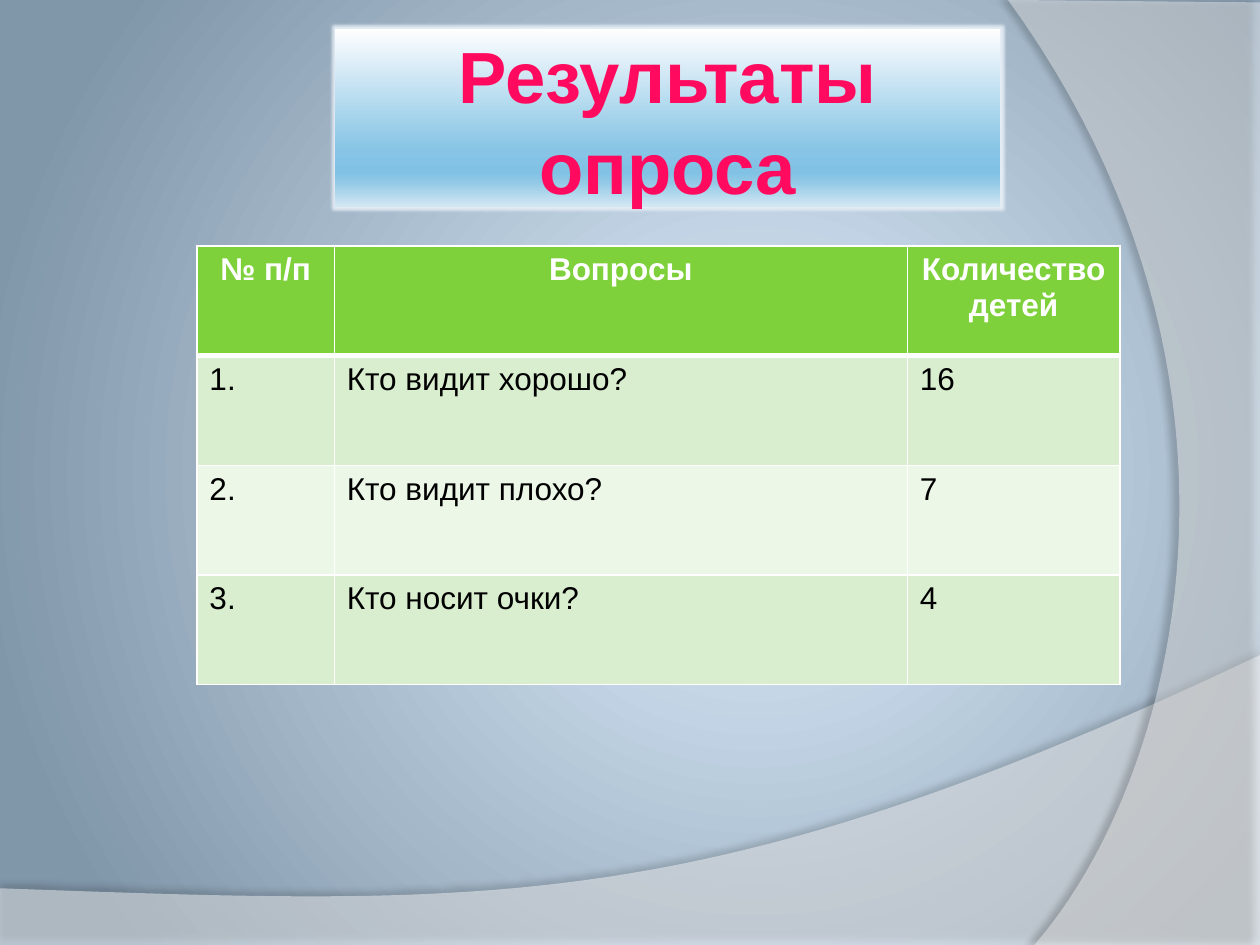
"""Build the survey results slide with its curved backdrop and table."""
from lxml import etree
from pptx import Presentation
from pptx.dml.color import RGBColor
from pptx.enum.text import MSO_ANCHOR, PP_ALIGN
from pptx.oxml import parse_xml
from pptx.oxml.ns import nsdecls, qn
from pptx.util import Pt

CENTER, LEFT = PP_ALIGN.CENTER, PP_ALIGN.LEFT
MIDDLE = MSO_ANCHOR.MIDDLE
WHITE = RGBColor(0xFF, 0xFF, 0xFF)
BLACK = RGBColor(0, 0, 0)
PINK = RGBColor(0xFF, 0x0A, 0x5E)
GREEN = RGBColor(0x7F, 0xD1, 0x3B)
LIGHT_GREEN = RGBColor(0xD8, 0xEE, 0xCE)
PALE_GREEN = RGBColor(0xEC, 0xF7, 0xE8)
HALO = RGBColor(0xE4, 0xEC, 0xF4)
BACKDROP = [(0, RGBColor(0xE0, 0xF0, 0xFF)), (100, RGBColor(0x80, 0x96, 0xA9))]
TITLE_STOPS = [
    (0, RGBColor(0xFE, 0xFE, 0xFF)),
    (68, RGBColor(0x87, 0xC4, 0xE5)),
    (81, RGBColor(0x81, 0xC2, 0xE4)),
    (86, RGBColor(0x90, 0xC8, 0xE6)),
    (100, RGBColor(0xD3, 0xE7, 0xF3)),
]
RADIAL = '<a:path path="circle"><a:fillToRect l="60000" t="50000" r="40000" b="50000"/></a:path>'
VERTICAL = '<a:lin ang="5400000" scaled="0"/>'
ROWS = [
    ("№ п/п", "Вопросы", "Количество детей"),
    ("1.", "Кто видит хорошо?", "16"),
    ("2.", "Кто видит плохо?", "7"),
    ("3.", "Кто носит очки?", "4"),
]


def gradient(stops, direction):
    marks = "".join(
        f'<a:gs pos="{place * 1000}"><a:srgbClr val="{color}"/></a:gs>' for place, color in stops
    )
    return parse_xml(
        f'<a:gradFill {nsdecls("a")} rotWithShape="1"><a:gsLst>{marks}</a:gsLst>{direction}</a:gradFill>'
    )


def effect(content):
    return parse_xml(f'<a:effectLst {nsdecls("a")}>{content}</a:effectLst>')


def curve(start, first, second, end, steps=48):
    points = []
    for step in range(steps + 1):
        t = step / steps
        weights = ((1 - t) ** 3, 3 * t * (1 - t) ** 2, 3 * t * t * (1 - t), t ** 3)
        points.append(tuple(
            sum(w * point[axis] for w, point in zip(weights, (start, first, second, end)))
            for axis in (0, 1)
        ))
    return points


def write(frame, text, size=18, color=BLACK, bold=False, align=LEFT, spacing=1.0, font="Arial"):
    para = frame.paragraphs[0]
    para.alignment, para.line_spacing = align, spacing
    span = para.add_run()
    span.text = text
    span.font.name, span.font.size, span.font.bold = font, Pt(size), bold
    span.font.color.rgb = color


class SurveySlide:
    def __init__(self, deck):
        self.page = deck.slides.add_slide(deck.slide_layouts[5])
        self.shapes = self.page.shapes
        self.page.background.fill.solid()
        solid = next(self.page._element.iter(qn("a:solidFill")))
        solid.getparent().replace(solid, gradient(BACKDROP, RADIAL))

    def wave(self, points, opacity, shade, blur, distance, angle):
        (x, y), *others = [(Pt(x), Pt(y)) for x, y in points]
        builder = self.shapes.build_freeform(x, y)
        builder.add_line_segments(others, close=True)
        shape = builder.convert_to_shape()
        shape.fill.solid()
        shape.fill.fore_color.rgb = WHITE
        shape.line.fill.background()
        properties = shape._element.spPr
        color = properties.find(qn("a:solidFill"))[0]
        etree.SubElement(color, qn("a:alpha"), val=str(opacity * 1000))
        properties.append(effect(
            f'<a:outerShdw blurRad="{Pt(blur)}" dist="{Pt(distance)}" dir="{angle * 60000}"'
            f' algn="ctr" rotWithShape="0"><a:srgbClr val="{BLACK}">'
            f'<a:alpha val="{shade * 1000}"/></a:srgbClr></a:outerShdw>'
        ))

    def title(self, text, left, top, width, height):
        box = self.shapes.title
        box.left, box.top, box.width, box.height = Pt(left), Pt(top), Pt(width), Pt(height)
        properties = box._element.spPr
        properties.append(gradient(TITLE_STOPS, VERTICAL))
        properties.append(effect(
            f'<a:glow rad="{Pt(3.5)}"><a:srgbClr val="{HALO}"/></a:glow>'
        ))
        frame = box.text_frame
        frame.word_wrap, frame.vertical_anchor = True, MIDDLE
        frame.margin_left = frame.margin_right = frame.margin_top = frame.margin_bottom = Pt(3.6)
        write(frame, text, size=41.4, color=PINK, bold=True, align=CENTER, spacing=1.05)
        self.shapes._spTree.append(box._element)

    def table(self, rows, left, top, widths, row_height):
        grid = self.shapes.add_table(
            len(rows), len(widths), Pt(left), Pt(top), Pt(sum(widths)), Pt(row_height * len(rows))
        ).table
        for column, width in zip(grid.columns, widths):
            column.width = Pt(width)
        for r, texts in enumerate(rows):
            grid.rows[r].height = Pt(row_height)
            header = r == 0
            fill = GREEN if header else (PALE_GREEN, LIGHT_GREEN)[r % 2]
            for c, text in enumerate(texts):
                cell = grid.cell(r, c)
                cell.fill.solid()
                cell.fill.fore_color.rgb = fill
                self.borders(cell, top=3 if r == 1 else 1, bottom=3 if header else 1)
                write(cell.text_frame, text, color=WHITE if header else BLACK,
                      bold=header, align=CENTER if header else LEFT)

    def borders(self, cell, top, bottom):
        properties = cell._tc.get_or_add_tcPr()
        for place, (side, width) in enumerate(zip("LRTB", (1, 1, top, bottom))):
            properties.insert(place, parse_xml(
                f'<a:ln{side} {nsdecls("a")} w="{Pt(width)}"><a:solidFill>'
                f'<a:srgbClr val="{WHITE}"/></a:solidFill></a:ln{side}>'
            ))


def main():
    deck = Presentation()
    deck.slide_width, deck.slide_height = Pt(720), Pt(540)
    slide = SurveySlide(deck)
    floor = curve((720, 374.4), (402.5, 524.9), (281.5, 517.7), (0, 507.6))
    slide.wave([(0, 540), (720, 540)] + floor, 45, 35, 4, 3.5, 270)
    side = curve((591.1, 540), (673.2, 445.7), (733, 216), (576, 0))
    slide.wave([(720, 1.4), (720, 540)] + side, 40, 45, 4, 4, 180)
    slide.title("Результаты опроса", 191.5, 16.5, 380, 101.5)
    slide.table(ROWS, 112.5, 140.5, (78.5, 327.5, 121.5), 62.7)
    deck.save("out.pptx")


if __name__ == "__main__":
    main()
